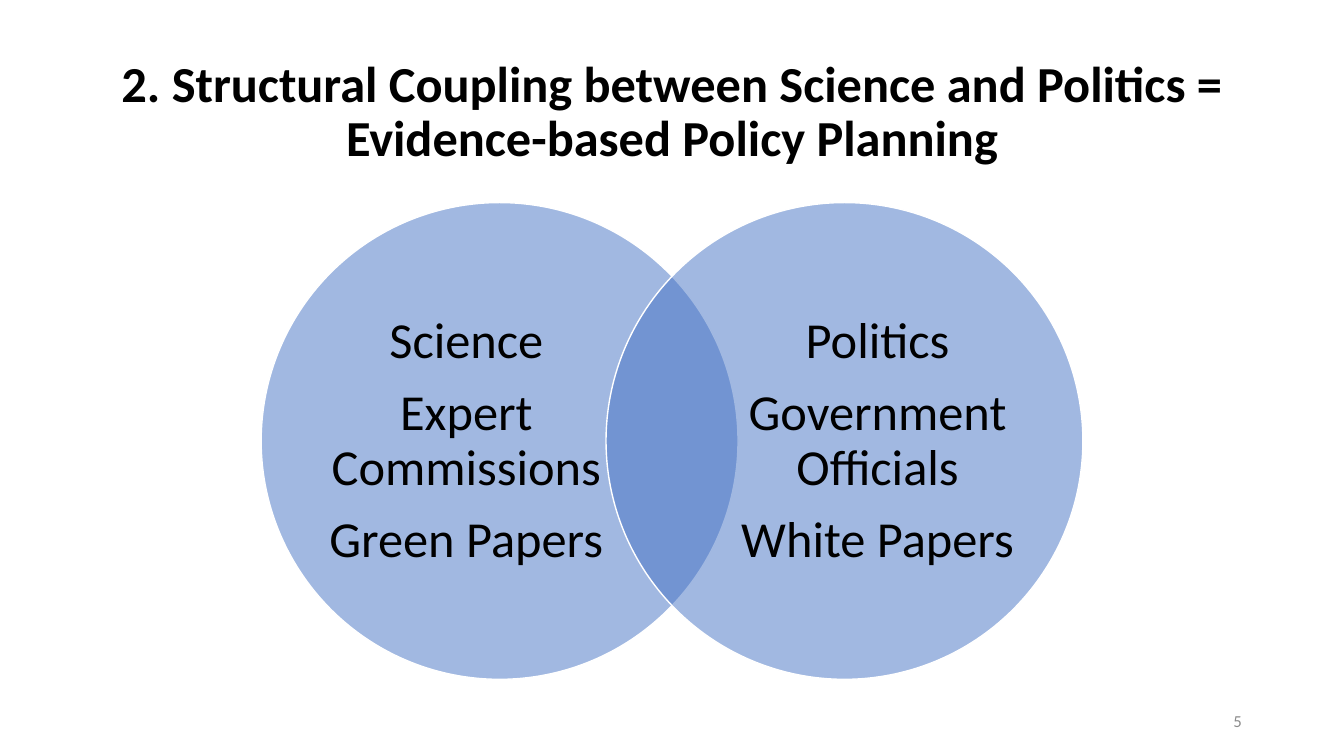
from lxml.etree import SubElement
from pptx import Presentation
from pptx.dml.color import RGBColor
from pptx.enum.shapes import MSO_SHAPE
from pptx.enum.text import MSO_ANCHOR, PP_ALIGN
from pptx.oxml.ns import qn
from pptx.util import Inches, Pt

WIDTH, HEIGHT = Inches(13.33), Inches(7.5)
FONT = "Calibri"
COLORS = {"circle": "4472C4", "outline": "FFFFFF", "text": "000000", "number": "8C8C8C"}

# Percent of the slide: left, top, width, height
TITLE_AREA = (6.9, 5.33, 86.25, 19.33)
LABEL_AREA = (24.45, 34.27, 20.5, 48.27)
NUMBER_AREA = (70.65, 92.67, 22.5, 5.33)
CIRCLE_LEFT, CIRCLE_TOP, CIRCLE_WIDTH = 19.43, 26.8, 35.48

SCIENCE = ["Science", "Expert Commissions", "Green Papers"]
POLITICS = ["Politics", "Government Officials", "White Papers"]


def across(percent):
    return round(WIDTH * percent / 100)


def down(percent):
    return round(HEIGHT * percent / 100)


def mirrored(left, width):
    return 100 - left - width


def color(name):
    return RGBColor.from_string(COLORS[name])


def add_text(slide, area, lines, size=36, bold=False, ink="text",
             align=PP_ALIGN.CENTER, spacing=0.9, after=0, inset=True):
    left, top, width, height = area
    box = slide.shapes.add_textbox(across(left), down(top), across(width), down(height))
    frame = box.text_frame
    frame.word_wrap = True
    frame.vertical_anchor = MSO_ANCHOR.MIDDLE
    if not inset:
        frame.margin_left = frame.margin_right = 0
        frame.margin_top = frame.margin_bottom = 0
    for index, line in enumerate(lines):
        paragraph = frame.add_paragraph() if index else frame.paragraphs[0]
        paragraph.alignment = align
        paragraph.line_spacing = spacing
        paragraph.space_after = Pt(after)
        run = paragraph.add_run()
        run.text = line
        run.font.name = FONT
        run.font.size = Pt(size)
        run.font.bold = bold
        run.font.color.rgb = color(ink)


def add_circle(slide, left):
    diameter = across(CIRCLE_WIDTH)
    circle = slide.shapes.add_shape(
        MSO_SHAPE.OVAL, across(left), down(CIRCLE_TOP), diameter, diameter)
    circle.shadow.inherit = False
    circle.fill.solid()
    circle.fill.fore_color.rgb = color("circle")
    circle.line.color.rgb = color("outline")
    circle.line.width = Pt(1)
    # Half-transparent fill lets the overlap show
    fill_color = circle.element.spPr.find(qn("a:solidFill")).find(qn("a:srgbClr"))
    SubElement(fill_color, qn("a:alpha")).set("val", "50000")


def add_venn_side(slide, lines, is_right=False):
    circle_left = CIRCLE_LEFT
    label_left, top, width, height = LABEL_AREA
    if is_right:
        circle_left = mirrored(circle_left, CIRCLE_WIDTH)
        label_left = mirrored(label_left, width)
    add_circle(slide, circle_left)
    add_text(slide, (label_left, top, width, height), lines, after=12.6, inset=False)


def main():
    presentation = Presentation()
    presentation.slide_width, presentation.slide_height = WIDTH, HEIGHT
    slide = presentation.slides.add_slide(presentation.slide_layouts[6])

    # Title
    title = "2. Structural Coupling between Science and Politics = Evidence-based Policy Planning"
    add_text(slide, TITLE_AREA, [title], bold=True)

    # Venn diagram
    add_venn_side(slide, SCIENCE)
    add_venn_side(slide, POLITICS, is_right=True)

    # Slide number
    add_text(slide, NUMBER_AREA, ["5"], size=12, ink="number",
             align=PP_ALIGN.RIGHT, spacing=1.0)

    presentation.save("out.pptx")


if __name__ == "__main__":
    main()
